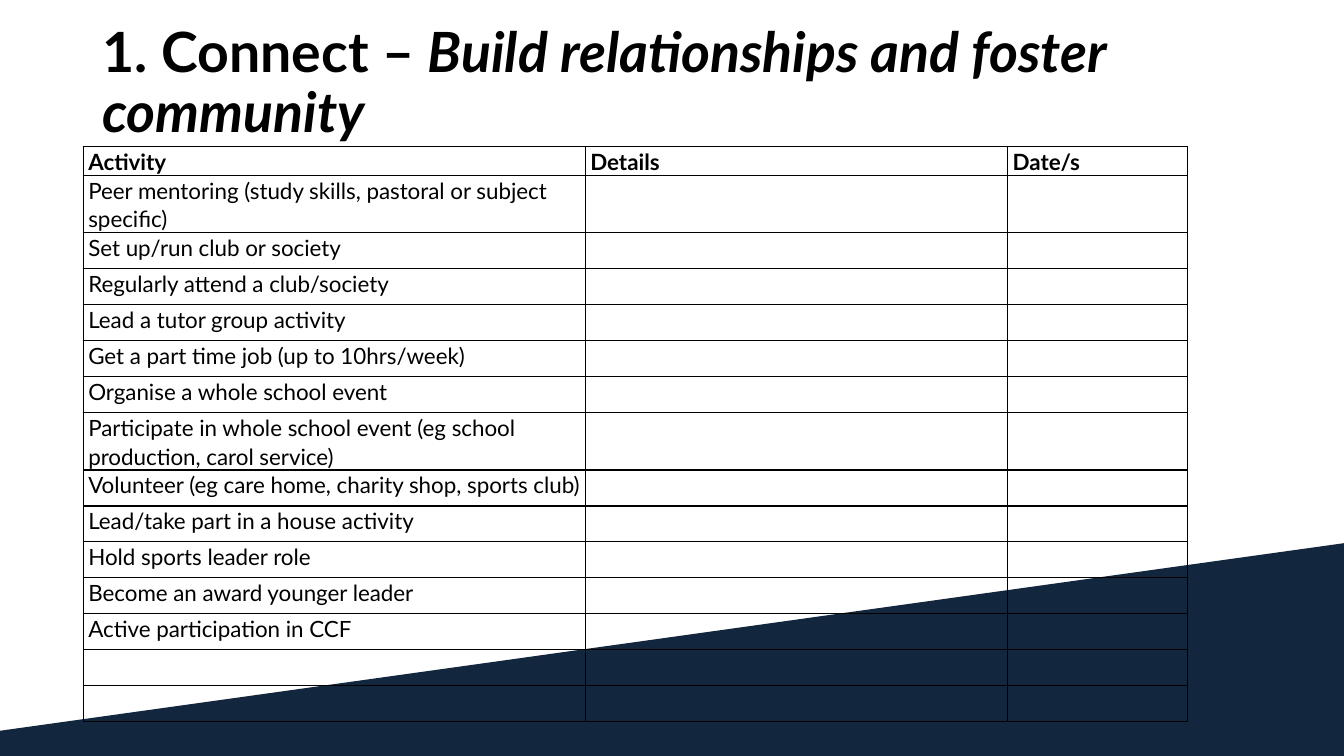
from lxml import etree
from pptx import Presentation
from pptx.dml.color import RGBColor
from pptx.enum.text import MSO_ANCHOR, MSO_AUTO_SIZE, PP_ALIGN
from pptx.oxml.ns import qn
from pptx.util import Pt

# Content
TITLE = [("1. Connect – ", False), ("Build relationships and foster community", True)]
HEADERS = ["Activity", "Details", "Date/s"]
ACTIVITIES = [
    "Peer mentoring (study skills, pastoral or subject specific)",
    "Set up/run club or society",
    "Regularly attend a club/society",
    "Lead a tutor group activity",
    "Get a part time job (up to 10hrs/week)",
    "Organise a whole school event",
    "Participate in whole school event (eg school production, carol service)",
    "Volunteer (eg care home, charity shop, sports club)",
    "Lead/take part in a house activity",
    "Hold sports leader role",
    "Become a award younger leader".replace("a award", "an award"),
    "Active participation in CCF",
]
BLANK_ROWS = 2

# Style and geometry, in points
FONT, BLACK, NAVY = "Lato", "000000", "12263D"
SLIDE_WIDTH, SLIDE_HEIGHT = 960, 540
WEDGE = [(0, 521.5), (SLIDE_WIDTH, 388), (SLIDE_WIDTH, SLIDE_HEIGHT), (0, SLIDE_HEIGHT)]
TITLE_BOX = (66, 8, 828, 104.4)
TABLE_LEFT, TABLE_TOP = 59.5, 104.8
COLUMN_WIDTHS = [358.6, 301.7, 128.2]
HEADER_HEIGHT, ROW_HEIGHT, TWO_LINE_HEIGHT = 20.5, 25.7, 41
TWO_LINE_LENGTH = 55


def color(hex_value):
    return RGBColor.from_string(hex_value)


def style_font(font, size, bold):
    font.name, font.size, font.bold = FONT, Pt(size), bold
    font.color.rgb = color(BLACK)


def add_borders(cell):
    properties = cell._tc.get_or_add_tcPr()
    for index, side in enumerate(("lnL", "lnR", "lnT", "lnB")):
        line = etree.Element(qn(f"a:{side}"), w=str(Pt(1)))
        fill = etree.SubElement(line, qn("a:solidFill"))
        etree.SubElement(fill, qn("a:srgbClr"), val=BLACK)
        properties.insert(index, line)


def fill_cell(cell, text, bold):
    cell.fill.background()
    cell.margin_left = cell.margin_right = Pt(3.6)
    cell.margin_top = cell.margin_bottom = 0
    cell.text = text
    paragraph = cell.text_frame.paragraphs[0]
    paragraph.line_spacing, paragraph.space_after = 1.07, Pt(8)
    style_font(paragraph.font, 16, bold)
    add_borders(cell)


def row_height(text):
    return TWO_LINE_HEIGHT if len(text) > TWO_LINE_LENGTH else ROW_HEIGHT


presentation = Presentation()
presentation.slide_width, presentation.slide_height = Pt(SLIDE_WIDTH), Pt(SLIDE_HEIGHT)
slide = presentation.slides.add_slide(presentation.slide_layouts[5])

# Navy wedge along the bottom
builder = slide.shapes.build_freeform(*WEDGE[0], scale=Pt(1))
builder.add_line_segments(WEDGE[1:], close=True)
wedge = builder.convert_to_shape()
wedge.shadow.inherit = False
wedge.fill.solid()
wedge.fill.fore_color.rgb = color(NAVY)
wedge.line.fill.background()

# Title
title = slide.shapes.title
title.left, title.top, title.width, title.height = map(Pt, TITLE_BOX)
frame = title.text_frame
frame.word_wrap, frame.auto_size = True, MSO_AUTO_SIZE.NONE
frame.vertical_anchor = MSO_ANCHOR.MIDDLE
paragraph = frame.paragraphs[0]
paragraph.alignment, paragraph.line_spacing = PP_ALIGN.LEFT, 0.9
style_font(paragraph.font, 39.6, True)
for text, italic in TITLE:
    run = paragraph.add_run()
    run.text, run.font.italic = text, italic

# Activity table
first_column = ACTIVITIES + [""] * BLANK_ROWS
rows = [HEADERS] + [[activity, "", ""] for activity in first_column]
heights = [HEADER_HEIGHT] + [row_height(activity) for activity in first_column]
table = slide.shapes.add_table(
    len(rows), len(HEADERS), Pt(TABLE_LEFT), Pt(TABLE_TOP),
    Pt(sum(COLUMN_WIDTHS)), Pt(sum(heights))).table
table.horz_banding = table.first_row = False
for column, width in zip(table.columns, COLUMN_WIDTHS):
    column.width = Pt(width)
for row_index, (texts, height) in enumerate(zip(rows, heights)):
    table.rows[row_index].height = Pt(height)
    for column_index, text in enumerate(texts):
        fill_cell(table.cell(row_index, column_index), text, row_index == 0)

presentation.save("out.pptx")
